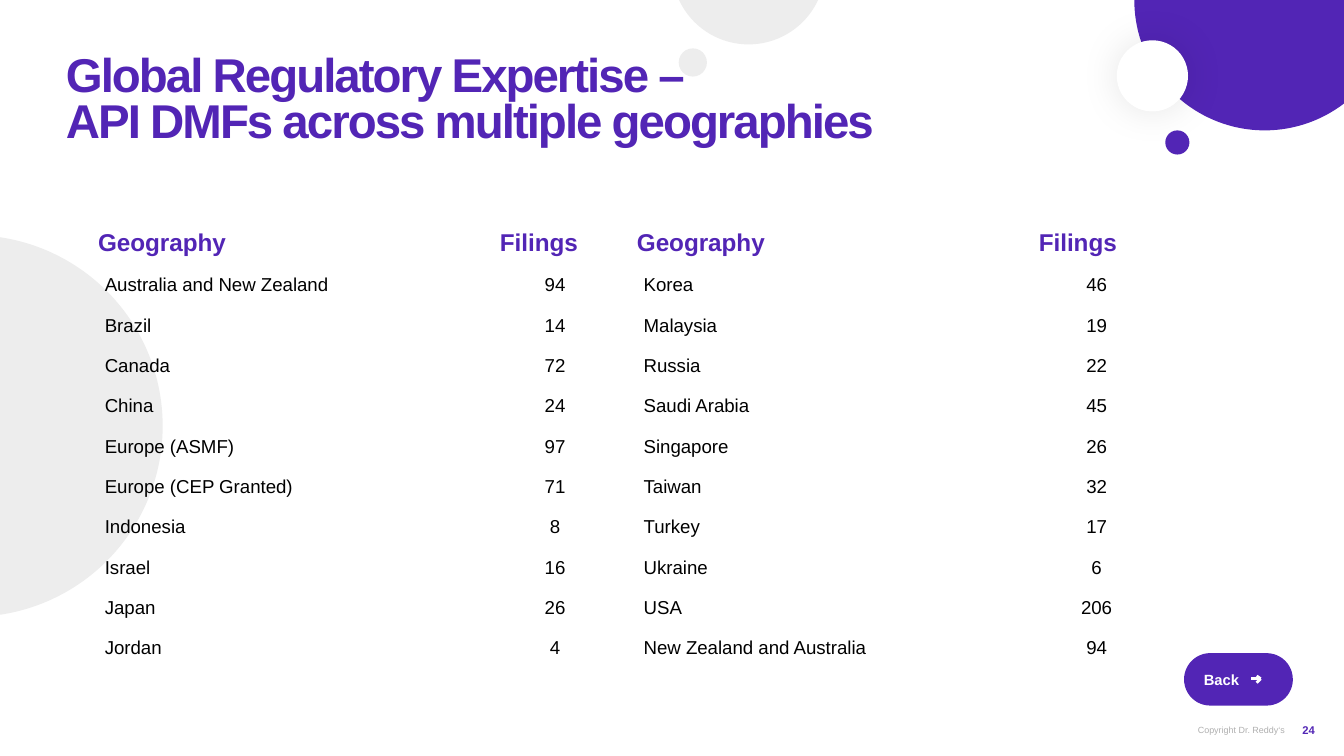
from lxml.etree import SubElement
from pptx import Presentation
from pptx.dml.color import RGBColor
from pptx.enum.shapes import MSO_CONNECTOR as CONNECTOR, MSO_SHAPE as SHAPE
from pptx.enum.text import MSO_ANCHOR as ANCHOR, MSO_AUTO_SIZE as AUTO_SIZE, PP_ALIGN as ALIGN
from pptx.oxml import parse_xml
from pptx.oxml.ns import nsdecls, qn
from pptx.util import Inches, Pt

COLORS = {
    "purple": "5225B5",
    "gray": "EDEDED",
    "muted": "AFAFAF",
    "white": "FFFFFF",
    "black": "000000",
}
FONT = "Arial"
PLAIN_TABLE_STYLE = "{2D5ABB26-0587-4C30-8999-92F81FD0307C}"

# left, top, diameter, colour
CIRCLES = [
    (-1.63, 1.75, 2.84, "gray"),
    (8.44, -0.97, 1.94, "purple"),
    (5, -0.81, 1.14, "gray"),
    (8.31, 0.3, 0.53, "white"),
    (8.67, 0.97, 0.18, "purple"),
    (5.05, 0.36, 0.21, "gray"),
]
HEADER = ("Geography", "Filings") * 2
FILINGS = [
    ("Australia and New Zealand", "94", "Korea", "46"),
    ("Brazil", "14", "Malaysia", "19"),
    ("Canada", "72", "Russia", "22"),
    ("China", "24", "Saudi Arabia", "45"),
    ("Europe (ASMF)", "97", "Singapore", "26"),
    ("Europe (CEP Granted)", "71", "Taiwan", "32"),
    ("Indonesia", "8", "Turkey", "17"),
    ("Israel", "16", "Ukraine", "6"),
    ("Japan", "26", "USA", "206"),
    ("Jordan", "4", "New Zealand and Australia", "94"),
]


def rgb(color):
    return RGBColor.from_string(COLORS[color])


def box(*lengths):
    return [Inches(length) for length in lengths]


class SlideBuilder:
    """Holds the font and the current slide."""

    def __init__(self, slide, font=FONT):
        self.slide = slide
        self.shapes = slide.shapes
        self.font = font

    def style(self, paragraph, size, color, bold=False, align=ALIGN.LEFT):
        paragraph.alignment = align
        for run in paragraph.runs:
            run.font.name = self.font
            run.font.size = Pt(size)
            run.font.bold = bold
            run.font.color.rgb = rgb(color)

    def frame(self, text_frame, margins, anchor):
        text_frame.word_wrap = True
        text_frame.auto_size = AUTO_SIZE.NONE
        text_frame.vertical_anchor = anchor
        (text_frame.margin_left, text_frame.margin_top,
         text_frame.margin_right, text_frame.margin_bottom) = box(*margins)

    def filled(self, preset, left, top, width, height, color):
        shape = self.shapes.add_shape(preset, *box(left, top, width, height))
        shape.shadow.inherit = False
        shape.fill.solid()
        shape.fill.fore_color.rgb = rgb(color)
        shape.line.fill.background()
        return shape

    def circle(self, left, top, diameter, color):
        circle = self.filled(SHAPE.OVAL, left, top, diameter, diameter, color)
        if color == "white":
            self.glow(circle)

    def glow(self, shape):
        """Give the shape a soft, centred shadow."""
        effects = shape._element.spPr.find(qn("a:effectLst"))
        effects.append(parse_xml(
            f'<a:outerShdw {nsdecls("a")} blurRad="{Pt(21)}" dist="0" algn="ctr" rotWithShape="0">'
            f'<a:srgbClr val="{COLORS["black"]}"><a:alpha val="10000"/></a:srgbClr></a:outerShdw>'))

    def title(self, text):
        title = self.shapes.title
        title.left, title.top, title.width, title.height = box(0.39, 0.37, 9.29, 0.75)
        self.shapes._spTree.append(title._element)  # above the circles
        title.text_frame.text = text
        self.frame(title.text_frame, (0.1, 0.05, 0.1, 0.05), ANCHOR.TOP)
        heading = title.text_frame.paragraphs[0]
        heading.line_spacing = 0.8
        heading.space_before = Pt(0)
        self.style(heading, 25.4, "purple", bold=True)
        for run in heading.runs:
            run.font._element.set("spc", "-108")

    def text(self, text, left, top, width, height, **style):
        label = self.shapes.add_textbox(*box(left, top, width, height)).text_frame
        label.text = text
        self.frame(label, (0, 0, 0, 0), ANCHOR.MIDDLE)
        self.style(label.paragraphs[0], **style)

    def table(self, header, rows, left, top, widths, header_height, row_height):
        height = header_height + row_height * len(rows)
        graphic = self.shapes.add_table(len(rows) + 1, len(widths),
                                        *box(left, top, sum(widths), height))
        table = graphic.table
        table.first_row = table.horz_banding = False
        table._tbl.tblPr.find(qn("a:tableStyleId")).text = PLAIN_TABLE_STYLE
        for column, width in zip(table.columns, widths):
            column.width = Inches(width)
        for r, values in enumerate([header, *rows]):
            table.rows[r].height = Inches(row_height if r else header_height)
            for c, value in enumerate(values):
                self.cell(table.cell(r, c), value, is_header=r == 0, is_number=c % 2 == 1)

    def cell(self, cell, value, is_header, is_number):
        cell.fill.background()
        cell.text_frame.text = value
        paragraph = cell.text_frame.paragraphs[0]
        if is_header:
            margins = (0.1, 0.05, 0.1, 0.05)
            self.style(paragraph, 13, "purple", bold=True)
        else:
            margins = (0.01 if is_number else 0.15, 0.01, 0.01, 0)
            cell.vertical_anchor = ANCHOR.MIDDLE
            self.style(paragraph, 10, "black", align=ALIGN.CENTER if is_number else ALIGN.LEFT)
        cell.margin_left, cell.margin_top, cell.margin_right, cell.margin_bottom = box(*margins)

    def button(self, text, left, top, width, height):
        button = self.filled(SHAPE.ROUNDED_RECTANGLE, left, top, width, height, "purple")
        button.adjustments[0] = 0.5
        button.text_frame.text = text
        self.frame(button.text_frame, (0.09, 0, 0.09, 0), ANCHOR.MIDDLE)
        self.style(button.text_frame.paragraphs[0], 7.9, "white", bold=True)

    def arrow(self, tip_x, tip_y, tails):
        """Draw a group of strokes that meet at the tip."""
        strokes = self.shapes.add_group_shape().shapes
        for x, y in tails:
            stroke = strokes.add_connector(CONNECTOR.STRAIGHT, *box(x, y, tip_x, tip_y))
            stroke.line.color.rgb = rgb("white")
            stroke.line.width = Pt(1.5)
            SubElement(stroke._element.spPr, qn("a:effectLst"))


def main():
    deck = Presentation()
    deck.slide_width = Inches(10)
    deck.slide_height = deck.slide_width * 9 // 16
    builder = SlideBuilder(deck.slides.add_slide(deck.slide_layouts[5]))

    for circle in CIRCLES:
        builder.circle(*circle)
    builder.title("Global Regulatory Expertise – \vAPI DMFs across multiple geographies")
    builder.table(HEADER, FILINGS, 0.63, 1.66, widths=(2.99, 1.02, 2.99, 1.06),
                  header_height=0.31, row_height=0.3)
    builder.text("Copyright Dr. Reddy‘s ", 8.25, 5.31, 1.33, 0.24,
                 size=4.8, color="muted", align=ALIGN.RIGHT)
    builder.text("24", 9.69, 5.31, 0.19, 0.24, size=6, color="purple", bold=True)
    builder.button("Back", 8.81, 4.86, 0.81, 0.39)
    builder.arrow(9.38, 5.05, tails=[(9.31, 5.05), (9.35, 5.03), (9.35, 5.08)])

    deck.save("out.pptx")


if __name__ == "__main__":
    main()
